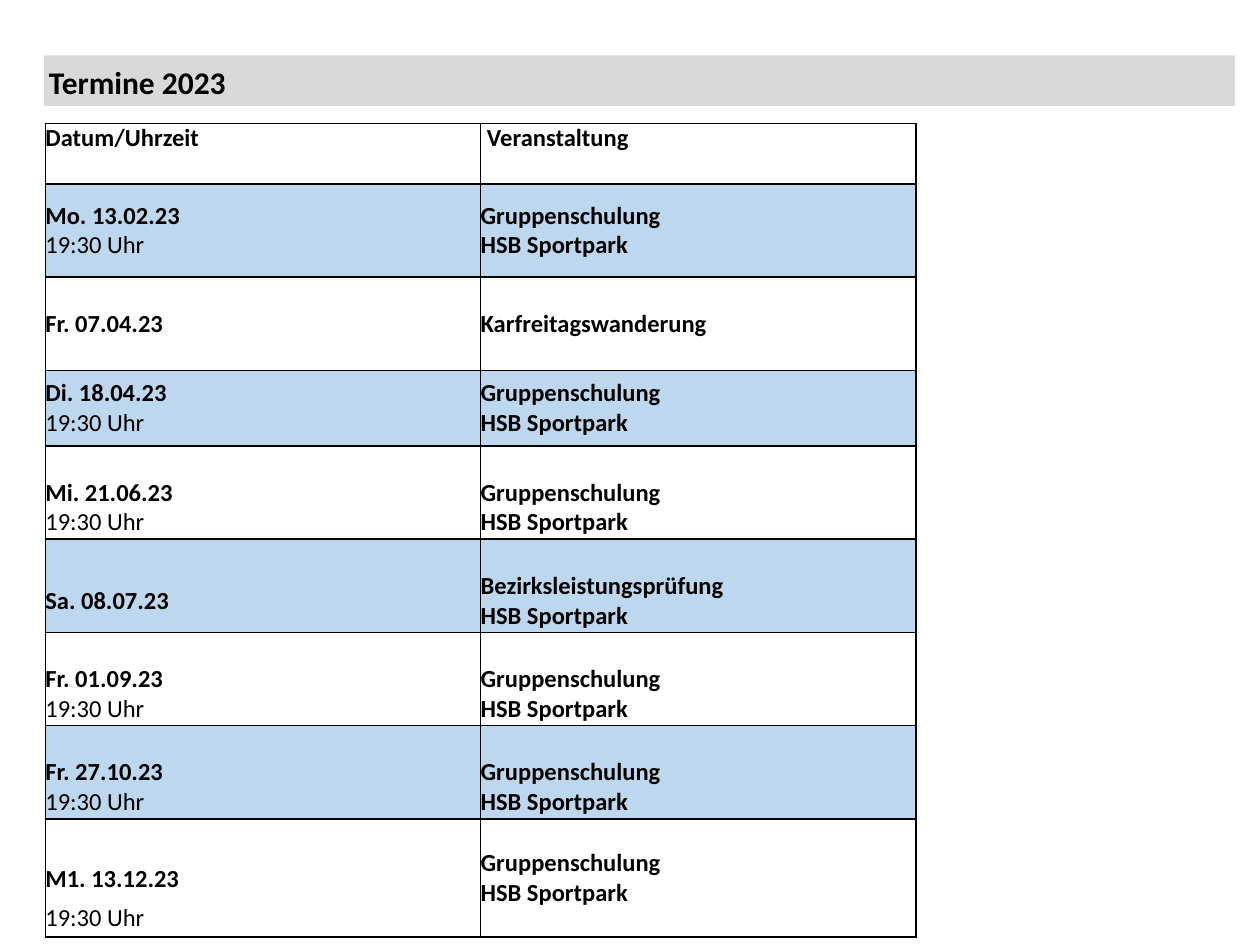
from lxml import etree
from pptx import Presentation
from pptx.dml.color import RGBColor
from pptx.enum.shapes import MSO_SHAPE
from pptx.enum.text import MSO_ANCHOR
from pptx.oxml.ns import qn
from pptx.util import Inches, Pt

RECTANGLE = MSO_SHAPE.RECTANGLE
TOP, MIDDLE = MSO_ANCHOR.TOP, MSO_ANCHOR.MIDDLE
BLACK = RGBColor(0x00, 0x00, 0x00)
WHITE = RGBColor(0xFF, 0xFF, 0xFF)
GREY = RGBColor(0xD9, 0xD9, 0xD9)
BLUE = RGBColor(0xBD, 0xD7, 0xEE)

TIME = "19:30 Uhr"
TRAINING = ["Gruppenschulung", "HSB Sportpark"]
LEAD = 0.24  # one line of free space above the text

# row height, space above the date, space above the event, date lines, event lines
EVENTS = [
    (0.74, 0, 0, ["Mo. 13.02.23", TIME], TRAINING),
    (0.74, 0, 0, ["Fr. 07.04.23"], ["Karfreitagswanderung"]),
    (0.60, 0, 0, ["Di. 18.04.23", TIME], TRAINING),
    (0.74, LEAD, LEAD, ["Mi. 21.06.23", TIME], TRAINING),
    (0.74, LEAD, LEAD, ["Sa. 08.07.23"], ["Bezirksleistungsprüfung", "HSB Sportpark"]),
    (0.74, LEAD, LEAD, ["Fr. 01.09.23", TIME], TRAINING),
    (0.74, LEAD, LEAD, ["Fr. 27.10.23", TIME], TRAINING),
    (0.94, 0.33, 0, ["M1. 13.12.23", TIME], TRAINING),
]
HEADER_HEIGHT = 0.48


def write(frame, lines, size=14, gap=0):
    """Write one paragraph per line; times are regular, all else is bold."""
    for index, line in enumerate(lines):
        paragraph = frame.paragraphs[0] if index == 0 else frame.add_paragraph()
        if index and gap:
            paragraph.space_before = Pt(gap)
        run = paragraph.add_run()
        run.text = line
        run.font.name = "Calibri"
        run.font.size = Pt(size)
        run.font.bold = line != TIME
        run.font.color.rgb = BLACK


def outline(cell, width=1):
    properties = cell._tc.get_or_add_tcPr()
    for position, side in enumerate(("a:lnL", "a:lnR", "a:lnT", "a:lnB")):
        line = etree.Element(qn(side), w=str(Pt(width)))
        fill = etree.SubElement(line, qn("a:solidFill"))
        etree.SubElement(fill, qn("a:srgbClr"), val=str(BLACK))
        properties.insert(position, line)


class Page:
    def __init__(self, slide):
        self.slide = slide

    def band(self, left, top, width, height, color):
        band = self.slide.shapes.add_shape(
            RECTANGLE, Inches(left), Inches(top), Inches(width), Inches(height))
        band.shadow.inherit = False
        band.fill.solid()
        band.fill.fore_color.rgb = color
        band.line.fill.background()

    def text(self, left, top, width, height, lines, **style):
        box = self.slide.shapes.add_textbox(
            Inches(left), Inches(top), Inches(width), Inches(height))
        box.text_frame.word_wrap = False
        write(box.text_frame, lines, **style)

    def table(self, left, top, width, heights, columns):
        frame = self.slide.shapes.add_table(
            len(heights), columns, Inches(left), Inches(top),
            Inches(width), Inches(sum(heights)))
        for row, height in zip(frame.table.rows, heights):
            row.height = Inches(height)
        return frame.table

    def cell(self, cell, lines, color, above=0, indent=0, anchor=MIDDLE, **style):
        cell.margin_left, cell.margin_top = Inches(indent), Inches(above)
        cell.margin_right = cell.margin_bottom = 0
        cell.vertical_anchor = anchor
        cell.fill.solid()
        cell.fill.fore_color.rgb = color
        outline(cell)
        write(cell.text_frame, lines, **style)


def main():
    deck = Presentation()
    deck.slide_width, deck.slide_height = Inches(10), Inches(7.5)
    page = Page(deck.slides.add_slide(deck.slide_layouts[6]))

    page.band(0.35, 0.44, 9.45, 0.4, GREY)
    heights = [HEADER_HEIGHT] + [event[0] for event in EVENTS]
    schedule = page.table(0.36, 0.98, 6.91, heights, 2)
    page.cell(schedule.cell(0, 0), ["Datum/Uhrzeit"], WHITE, anchor=TOP)
    page.cell(schedule.cell(0, 1), ["Veranstaltung"], WHITE, anchor=TOP, indent=0.05)

    for row, (_, date_above, event_above, date, event) in enumerate(EVENTS, 1):
        color = BLUE if row % 2 else WHITE
        gap = 5.5 if row == len(EVENTS) else 0
        page.cell(schedule.cell(row, 0), date, color, above=date_above, gap=gap)
        page.cell(schedule.cell(row, 1), event, color, above=event_above)

    page.text(0.29, 0.45, 1.64, 0.4, ["Termine 2023"], size=18)
    deck.save("out.pptx")


if __name__ == "__main__":
    main()
